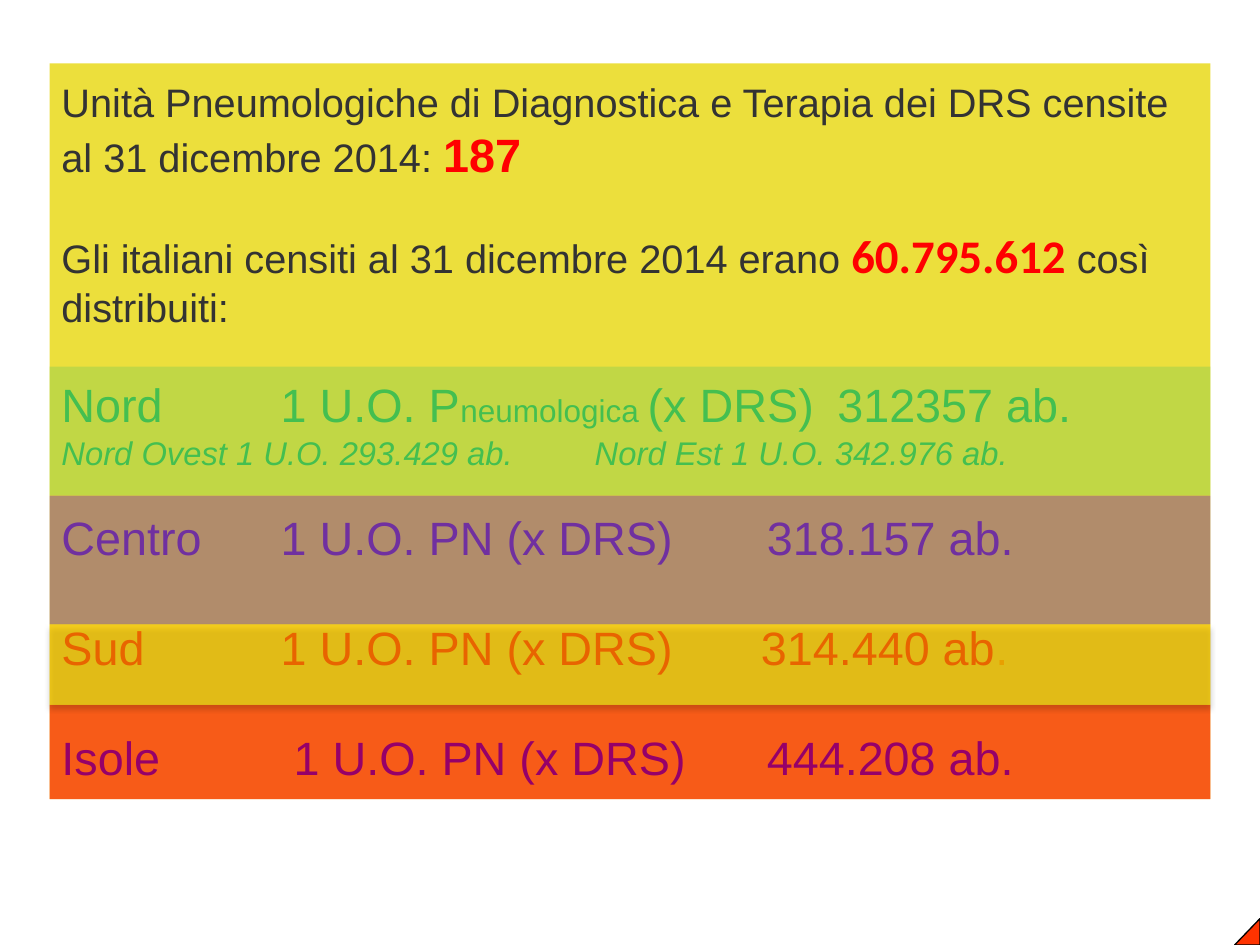
from dataclasses import dataclass
from itertools import accumulate

from lxml.etree import SubElement
from pptx import Presentation
from pptx.dml.color import RGBColor
from pptx.enum.shapes import MSO_SHAPE
from pptx.enum.text import MSO_ANCHOR, PP_ALIGN
from pptx.oxml.ns import qn
from pptx.util import Cm, Pt


@dataclass(frozen=True)
class Theme:
    panel: str = "ECDF3C"
    body: str = "333333"
    red: str = "FF0000"
    north: str = "00B050"
    centre: str = "7030A0"
    islands: str = "0000FF"
    dot: str = "FF9900"
    north_band: str = "92D050"
    south_band: str = "FFC000"
    corner: str = "FF3300"
    outline: str = "000000"
    font: str = "Arial"
    number_font: str = "Calibri"
    large: float = 26.7
    medium: float = 22.7
    small: float = 18.7
    tiny: float = 18


class SlideBuilder:
    def __init__(self, slide, theme):
        self.slide = slide
        self.theme = theme

    def shape(self, kind, left, top, width, height, color):
        shape = self.slide.shapes.add_shape(kind, Cm(left), Cm(top), Cm(width), Cm(height))
        shape.shadow.inherit = False
        shape.fill.solid()
        shape.fill.fore_color.rgb = RGBColor.from_string(color)
        shape.line.fill.background()
        return shape

    def panel(self, left, top, width, height):
        shape = self.shape(MSO_SHAPE.RECTANGLE, left, top, width, height, self.theme.panel)
        frame = shape.text_frame
        frame.word_wrap = True
        frame.vertical_anchor = MSO_ANCHOR.MIDDLE
        frame.margin_left = frame.margin_right = Cm(0.24)
        frame.margin_top = frame.margin_bottom = Cm(0.13)
        return frame

    def paragraph(self, frame, runs, space_before=0, tabs=()):
        first = frame.paragraphs[0]
        paragraph = frame.add_paragraph() if first.runs else first
        paragraph.alignment = PP_ALIGN.LEFT
        paragraph.space_before = Pt(space_before)
        if tabs:
            tab_list = SubElement(paragraph._p.get_or_add_pPr(), qn("a:tabLst"))
            for position in tabs:
                SubElement(tab_list, qn("a:tab"), pos=str(Cm(position)), algn="l")
        for text, size, color, *options in runs:
            run = paragraph.add_run()
            run.text = text
            run.font.size = Pt(size)
            run.font.color.rgb = RGBColor.from_string(color)
            run.font.name = self.theme.number_font if "number" in options else self.theme.font
            run.font.bold = "bold" in options
            run.font.italic = "italic" in options

    def band(self, left, top, width, height, color, opacity, shadow=False):
        shape = self.shape(MSO_SHAPE.RECTANGLE, left, top, width, height, color)
        fill_color = shape._element.spPr.find(qn("a:solidFill"))[0]
        SubElement(fill_color, qn("a:alpha"), val=str(opacity * 1000))
        if shadow:
            effects = shape._element.spPr.find(qn("a:effectLst"))
            outer = SubElement(effects, qn("a:outerShdw"), blurRad=str(Pt(3.1)),
                               dist=str(Pt(1.8)), dir="5400000", rotWithShape="0")
            shadow_color = SubElement(outer, qn("a:srgbClr"), val=self.theme.outline)
            SubElement(shadow_color, qn("a:alpha"), val="35000")

    def corner(self, left, top, width, height):
        shape = self.shape(MSO_SHAPE.RIGHT_TRIANGLE, left, top, width, height, self.theme.corner)
        shape._element.spPr.xfrm.set("flipH", "1")
        shape.line.color.rgb = RGBColor.from_string(self.theme.outline)
        shape.line.width = Pt(0.75)


def main():
    presentation = Presentation()
    presentation.slide_width, presentation.slide_height = Cm(25.4), Cm(19.05)
    theme = Theme()
    slide = presentation.slides.add_slide(presentation.slide_layouts[6])
    builder = SlideBuilder(slide, theme)
    left, width = 1, 23.4
    medium_gap, small_gap, large_gap = 26, 21.5, 30.7

    frame = builder.panel(left, 1.28, width, 14.83)
    builder.paragraph(frame, [
        ("Unità Pneumologiche di Diagnostica e Terapia dei DRS censite al 31 dicembre 2014: ",
         theme.medium, theme.body),
        ("187", theme.large, theme.red, "bold"),
    ])
    builder.paragraph(frame, [
        ("Gli italiani censiti al 31 dicembre 2014 erano ", theme.medium, theme.body),
        ("60.795.612 ", theme.large, theme.red, "bold", "number"),
        ("così distribuiti:", theme.medium, theme.body),
    ], medium_gap)
    builder.paragraph(frame, [
        ("Nord\t1 U.O. P", theme.large, theme.north),
        ("neumologica ", theme.tiny, theme.north),
        ("(x DRS)\t312357 ab.", theme.large, theme.north),
    ], medium_gap, (4.42, 15.64))
    builder.paragraph(frame, [
        ("Nord Ovest 1 U.O. 293.429 ab.\tNord Est 1 U.O. 342.976 ab.",
         theme.small, theme.north, "italic"),
    ], tabs=(10.75,))
    builder.paragraph(frame, [
        ("Centro\t1 U.O. PN (x DRS)\t318.157 ab.", theme.large, theme.centre),
    ], small_gap, (4.42, 14.22))
    builder.paragraph(frame, [
        ("Sud\t1 U.O. PN (x DRS)\t314.440 ab", theme.large, theme.red),
        (".", theme.large, theme.dot),
    ], large_gap, (4.42, 14.1))
    builder.paragraph(frame, [
        ("Isole\t1 U.O. PN (x DRS)\t444.208 ab.", theme.large, theme.islands),
    ], large_gap, (4.68, 14.22))

    heights = (2.6, 2.6, 1.62, 1.9)
    north, centre, south, islands = zip(accumulate(heights, initial=7.39), heights)
    for (top, height), color, opacity, shadow in (
        (north, theme.north_band, 47, False),
        (centre, theme.centre, 47, False),
        (islands, theme.red, 59, False),
        (south, theme.south_band, 52, True),
    ):
        builder.band(left, top, width, height, color, opacity, shadow)

    builder.corner(24.89, 18.52, 0.51, 0.53)
    presentation.save("out.pptx")


if __name__ == "__main__":
    main()
